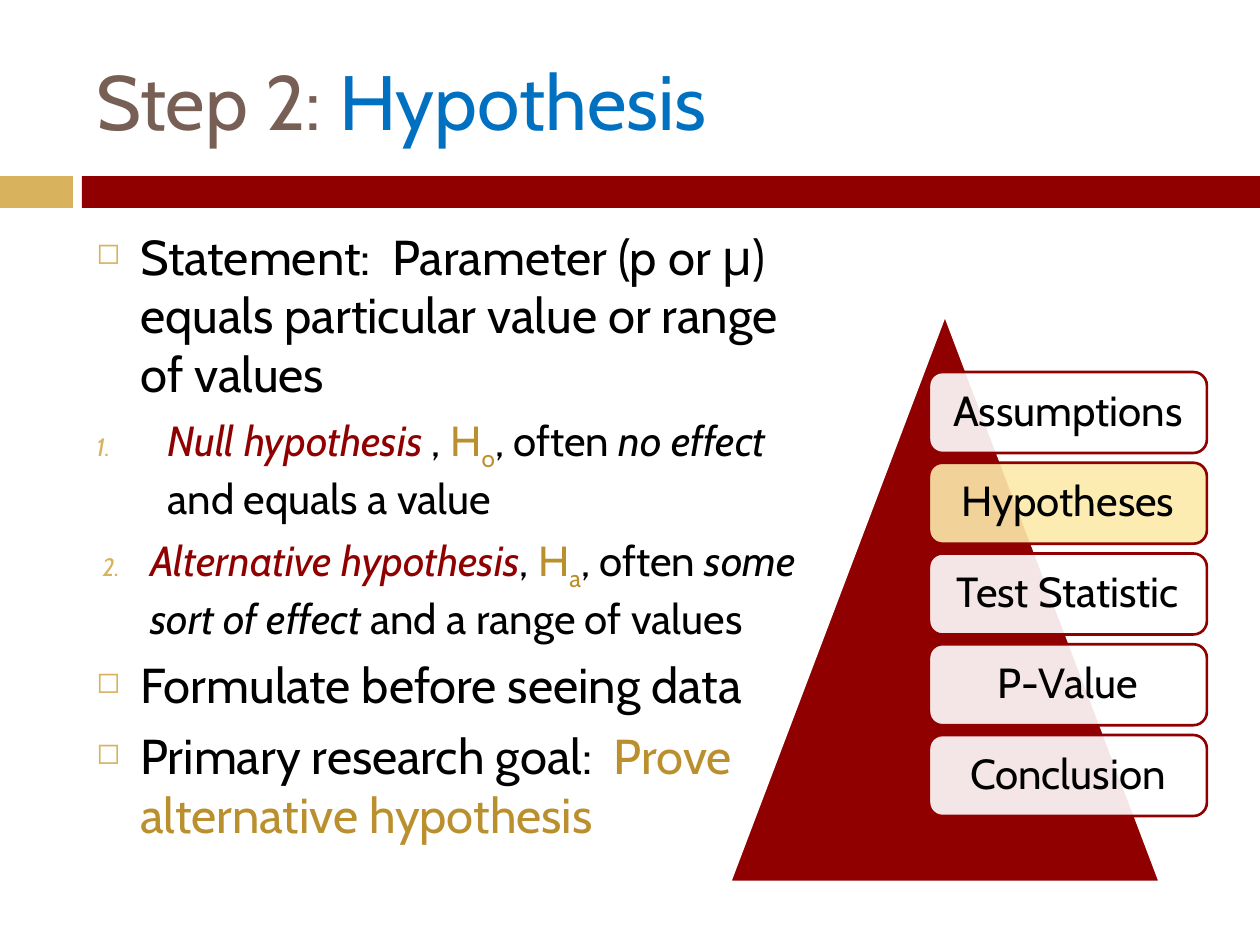
"""Build the hypothesis step slide of a significance test lesson."""
import pptx
import pptx.dml.color
import pptx.enum.shapes
import pptx.enum.text
import pptx.oxml.ns
import pptx.util
from lxml import etree

RGB = pptx.dml.color.RGBColor
KIND = pptx.enum.shapes.MSO_SHAPE
ALIGN = pptx.enum.text.PP_ALIGN
MIDDLE = pptx.enum.text.MSO_ANCHOR.MIDDLE

BLACK = RGB(0x00, 0x00, 0x00)
WHITE = RGB(0xFF, 0xFF, 0xFF)
RED = RGB(0x90, 0x00, 0x00)
SAND = RGB(0xD8, 0xB2, 0x5C)
GOLD = RGB(0xBA, 0x8F, 0x2D)
CREAM = RGB(0xFC, 0xEA, 0xAA)
BROWN = RGB(0x77, 0x5F, 0x55)
BLUE = RGB(0x00, 0x70, 0xC0)

FACE = "Cabin"
SCALE = 914400 / 126

TITLE = [("Step 2: ", BROWN, ""), ("Hypothesis", BLUE, "")]
POINT = dict(size=28, left=44, hang=44, mark=("buChar", "char", "◻"))
NUMBER = dict(size=24, mark=("buAutoNum", "type", "arabicPeriod"))
BODY = [
    (POINT, [("Statement:  Parameter (p or μ) equals particular value or range of values", BLACK, "")]),
    (dict(NUMBER, left=71, hang=71), [
        ("Null hypothesis ", RED, "italic"), (", ", BLACK, ""),
        ("H", GOLD, ""), ("o", GOLD, "sub"), (", often ", BLACK, ""),
        ("no effect", BLACK, "italic"), (" and equals a value", BLACK, "")]),
    (dict(NUMBER, left=54, hang=48), [
        ("Alternative hypothesis", RED, "italic"), (", ", BLACK, ""),
        ("H", GOLD, ""), ("a", GOLD, "sub"), (", often ", BLACK, ""),
        ("some sort of effect", BLACK, "italic"), (" and a range of values", BLACK, "")]),
    (POINT, [("Formulate before seeing data", BLACK, "")]),
    (POINT, [("Primary research goal:  ", BLACK, ""),
             ("Prove alternative hypothesis", GOLD, "")]),
]
STEPS = ["Assumptions", "Hypotheses", "Test Statistic", "P-Value", "Conclusion"]
CURRENT = "Hypotheses"
TOP, PITCH = 372, 90.75


def px(num):
    return pptx.util.Emu(round(num * SCALE))


def add_tag(node, name, **attrs):
    return etree.SubElement(node, pptx.oxml.ns.qn("a:" + name), attrs)


def add_shape(slide, kind, box, fill, line=None):
    shape = slide.shapes.add_shape(kind, *map(px, box))
    shape.shadow.inherit = False
    shape.fill.solid()
    shape.fill.fore_color.rgb = fill
    if line is None:
        shape.line.fill.background()
    else:
        shape.line.color.rgb = line
        shape.line.width = pptx.util.Pt(1.5)
    return shape


def add_box(slide, box):
    frame = slide.shapes.add_textbox(*map(px, box)).text_frame
    frame.word_wrap = True
    return frame


def set_font(para, size):
    para.font.name = FACE
    para.font.size = pptx.util.Pt(size)


def add_runs(para, runs):
    for text, color, style in runs:
        run = para.add_run()
        run.text = text
        run.font.color.rgb = color
        if style == "italic":
            run.font.italic = True
        elif style == "sub":
            run.font._element.set("baseline", "-25000")


def set_bullet(para, left, hang, mark):
    props = para._p.get_or_add_pPr()
    props.set("marL", str(px(left)))
    props.set("indent", str(-px(hang)))
    add_tag(add_tag(props, "buClr"), "srgbClr", val=str(SAND))
    add_tag(props, "buSzPct", val="60000")
    name, key, value = mark
    add_tag(props, name, **{key: value})


def add_title(slide):
    frame = add_box(slide, (84, 32, 1124, 136))
    frame.vertical_anchor = MIDDLE
    para = frame.paragraphs[0]
    set_font(para, 44)
    add_runs(para, TITLE)


def add_body(slide):
    frame = add_box(slide, (84, 220, 725, 620))
    for i, (look, runs) in enumerate(BODY):
        para = frame.add_paragraph() if i else frame.paragraphs[0]
        para.space_before = pptx.util.Pt(7)
        set_bullet(para, look["left"], look["hang"], look["mark"])
        set_font(para, look["size"])
        add_runs(para, runs)


def add_steps(slide):
    add_shape(slide, KIND.ISOSCELES_TRIANGLE, (730, 315, 430, 567), RED, WHITE)
    for i, step in enumerate(STEPS):
        fill = CREAM if step == CURRENT else WHITE
        card = add_shape(slide, KIND.ROUNDED_RECTANGLE,
                         (929, TOP + i * PITCH, 278, 81), fill, RED)
        tint = card.fill._xPr.find(".//" + pptx.oxml.ns.qn("a:srgbClr"))
        add_tag(tint, "alpha", val="90000")
        frame = card.text_frame
        frame.word_wrap = True
        frame.vertical_anchor = MIDDLE
        para = frame.paragraphs[0]
        para.alignment = ALIGN.CENTER
        para.line_spacing = 0.9
        set_font(para, 24)
        add_runs(para, [(step, BLACK, "")])


def main():
    deck = pptx.Presentation()
    deck.slide_width, deck.slide_height = px(1260), px(945)
    slide = deck.slides.add_slide(deck.slide_layouts[6])
    add_shape(slide, KIND.RECTANGLE, (0, 176, 73, 32), SAND)
    add_shape(slide, KIND.RECTANGLE, (82, 176, 1178, 32), RED)
    add_title(slide)
    add_body(slide)
    add_steps(slide)
    deck.save("out.pptx")


if __name__ == "__main__":
    main()
